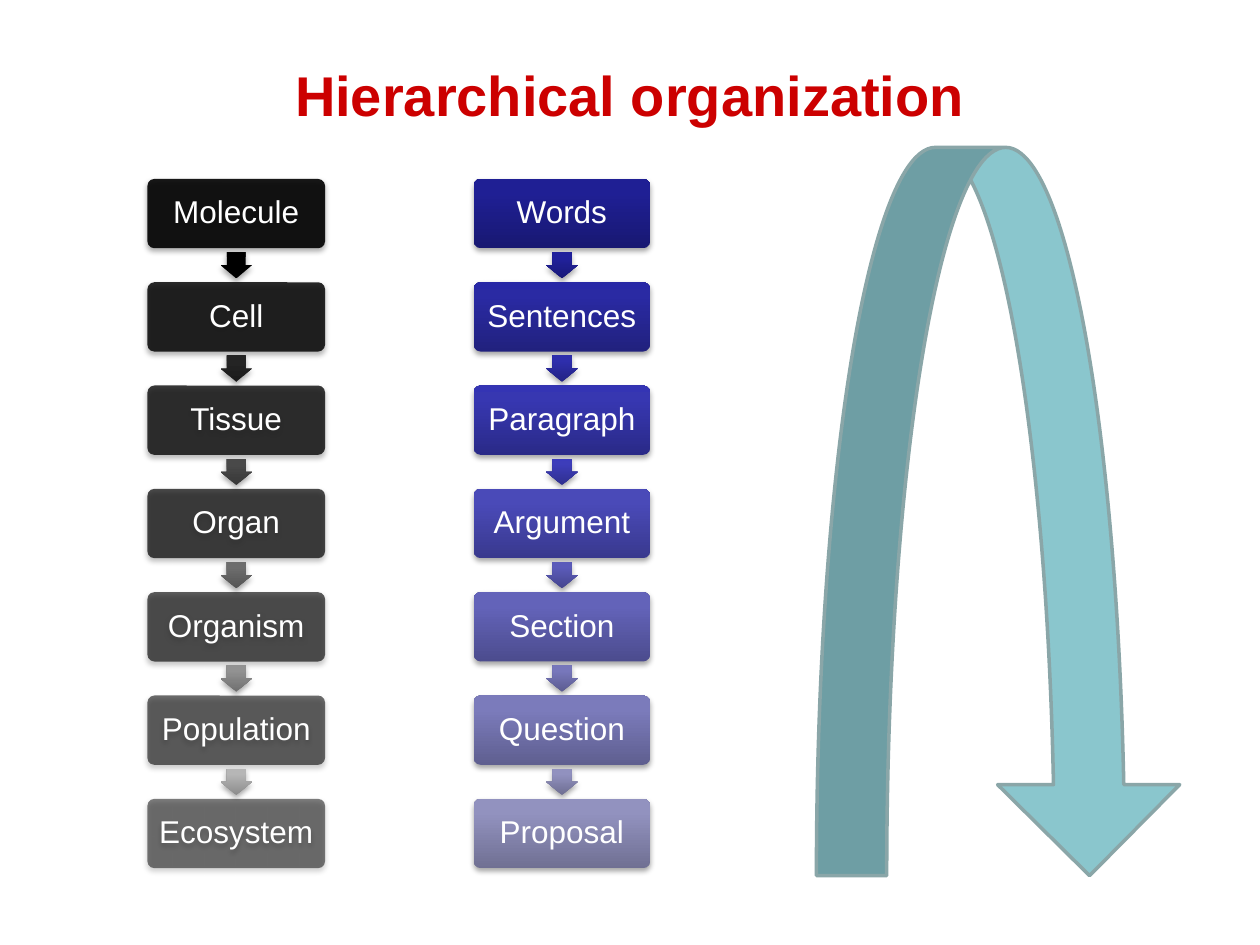
from dataclasses import dataclass

from pptx import Presentation
from pptx.dml.color import RGBColor as RGB
from pptx.enum.shapes import MSO_SHAPE as Shape
from pptx.enum.text import MSO_ANCHOR as Anchor, PP_ALIGN as Align
from pptx.oxml import parse_xml
from pptx.oxml.ns import nsdecls
from pptx.util import Inches, Pt


@dataclass(frozen=True)
class Theme:
    font: str = "Arial"
    title: str = "CC0000"
    label: str = "FFFFFF"
    loop_fill: str = "8AC6CD"
    loop_line: str = "8AA6A8"
    title_size: int = 32
    label_size: int = 18


@dataclass(frozen=True)
class Chain:
    """A column of boxes; fills alternate box, arrow, box and so on."""
    left: float
    width: float
    labels: list[str]
    fills: list[str]


THEME = Theme()
TOP, PITCH, BOX_H = 1.42, 0.82, 0.55
ARROW_LEN, ARROW_W = 0.21, 0.25
STOPS = (0, 80, 100)


def gradient(*colors: str) -> str:
    stops = "".join(f'<a:gs pos="{pos * 1000}"><a:srgbClr val="{c}"/></a:gs>'
                    for pos, c in zip(STOPS, colors))
    return (f'<a:gradFill {nsdecls("a")} rotWithShape="0"><a:gsLst>{stops}</a:gsLst>'
            '<a:lin ang="16200000" scaled="0"/></a:gradFill>')


def black(opacity: float) -> str:
    return (f'<a:solidFill {nsdecls("a")}><a:srgbClr val="000000">'
            f'<a:alpha val="{round(opacity * 1000)}"/></a:srgbClr></a:solidFill>')


def gray_fills(count: int) -> list[str]:
    """Boxes fade from 90 to 50 percent black while the arrows grow lighter."""
    fills = []
    for i in range(count):
        fills.append(black(90 - 40 * i / (count - 1)))
        fills.append(gradient(*(f"{round(step * i):02X}" * 3 for step in (28, 36.4, 36.6))))
    return fills[:-1]


BLUES = [
    ("181872", "1F1F94", "1D1D97"), ("191978", "21219C", "1F1F9F"),
    ("21217E", "2A2AA3", "2828A6"), ("232385", "2E2EAC", "2C2CAF"),
    ("2A2A88", "3737B1", "3434B4"), ("2F2F8F", "3D3DBA", "3B3BBD"),
    ("39398E", "4A4AB8", "4848BB"), ("46468F", "5B5BBA", "5A5ABC"),
    ("4C4C8E", "6363B9", "6262BB"), ("5C5C90", "7777BB", "7676BD"),
    ("5F5F90", "7B7BBB", "7B7BBD"), ("6F6F93", "9191BF", "9090C1"),
    ("707093", "9292BF", "9191C0"),
]
BIOLOGY = ["Molecule", "Cell", "Tissue", "Organ", "Organism", "Population", "Ecosystem"]
WRITING = ["Words", "Sentences", "Paragraph", "Argument", "Section", "Question", "Proposal"]
CHAINS = [
    Chain(1.17, 1.41, BIOLOGY, gray_fills(len(BIOLOGY))),
    Chain(3.76, 1.40, WRITING, [gradient(*blue) for blue in BLUES]),
]


def add_block(s, kind: Shape, box: tuple, adjustments: tuple, fill: str):
    """Add a borderless shape with the given fill and a soft shadow below."""
    sp = s.shapes.add_shape(kind, *map(Inches, box))
    for i, value in enumerate(adjustments):
        sp.adjustments[i] = value
    sp.line.fill.background()
    sp.shadow.inherit = False
    props = sp.element.spPr
    props.prstGeom.addnext(parse_xml(fill))
    props.find("{*}effectLst").append(parse_xml(
        f'<a:outerShdw {nsdecls("a")} blurRad="40000" dist="23000" dir="5400000" '
        'rotWithShape="0"><a:srgbClr val="000000"><a:alpha val="35000"/></a:srgbClr>'
        '</a:outerShdw>'))
    return sp


def write(sp, text: str, size: int, color: str, bold: bool = False):
    tf = sp.text_frame
    tf.word_wrap = True
    tf.vertical_anchor = Anchor.MIDDLE
    p = tf.paragraphs[0]
    p.text = text
    p.alignment = Align.CENTER
    p.font.name, p.font.size, p.font.bold = THEME.font, Pt(size), bold
    p.font.color.rgb = RGB.from_string(color)
    return tf


def add_chain(s, chain: Chain) -> None:
    for row, label in enumerate(chain.labels):
        top = TOP + row * PITCH
        sp = add_block(s, Shape.ROUNDED_RECTANGLE, (chain.left, top, chain.width, BOX_H),
                       (0.1,), chain.fills[2 * row])
        tf = write(sp, label, THEME.label_size, THEME.label)
        tf.margin_left = tf.margin_right = tf.margin_top = tf.margin_bottom = Inches(0.07)
        tf.paragraphs[0].line_spacing = 0.9
        if row < len(chain.labels) - 1:
            left = chain.left + (chain.width - ARROW_LEN) / 2
            gap_middle = top + (BOX_H + PITCH) / 2
            arrow = add_block(s, Shape.RIGHT_ARROW,
                              (left, gap_middle - ARROW_W / 2, ARROW_LEN, ARROW_W),
                              (0.6, 0.5), chain.fills[2 * row + 1])
            arrow.rotation = 90


def add_loop(s) -> None:
    """Add the large arrow that rises and comes back down."""
    sp = s.shapes.add_shape(Shape.CURVED_UP_ARROW, *map(Inches, (6.48, 1.17, 2.89, 5.78)))
    for i, value in enumerate((0.193, 0.5, 0.25)):
        sp.adjustments[i] = value
    sp.element.spPr.xfrm.set("flipV", "1")
    sp.shadow.inherit = False
    sp.fill.solid()
    sp.fill.fore_color.rgb = RGB.from_string(THEME.loop_fill)
    sp.line.color.rgb = RGB.from_string(THEME.loop_line)
    sp.line.width = Pt(2)


def main() -> None:
    prs = Presentation()
    prs.slide_width, prs.slide_height = Inches(10), Inches(7.5)
    s = prs.slides.add_slide(prs.slide_layouts[6])
    title = s.shapes.add_textbox(*map(Inches, (0.5, 0.33, 9, 0.83)))
    write(title, "Hierarchical organization", THEME.title_size, THEME.title, bold=True)
    for chain in CHAINS:
        add_chain(s, chain)
    add_loop(s)
    prs.save("out.pptx")


if __name__ == "__main__":
    main()
